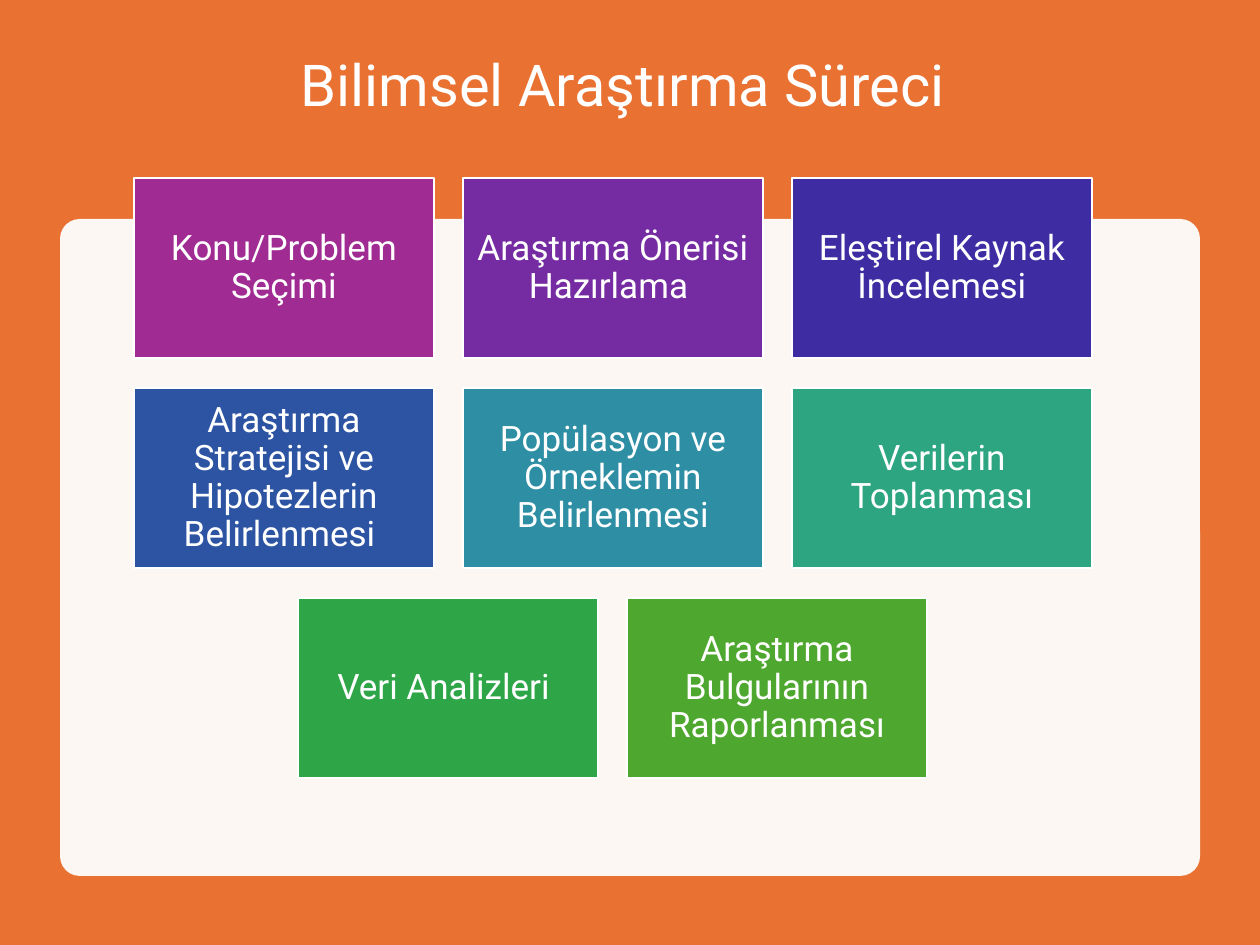
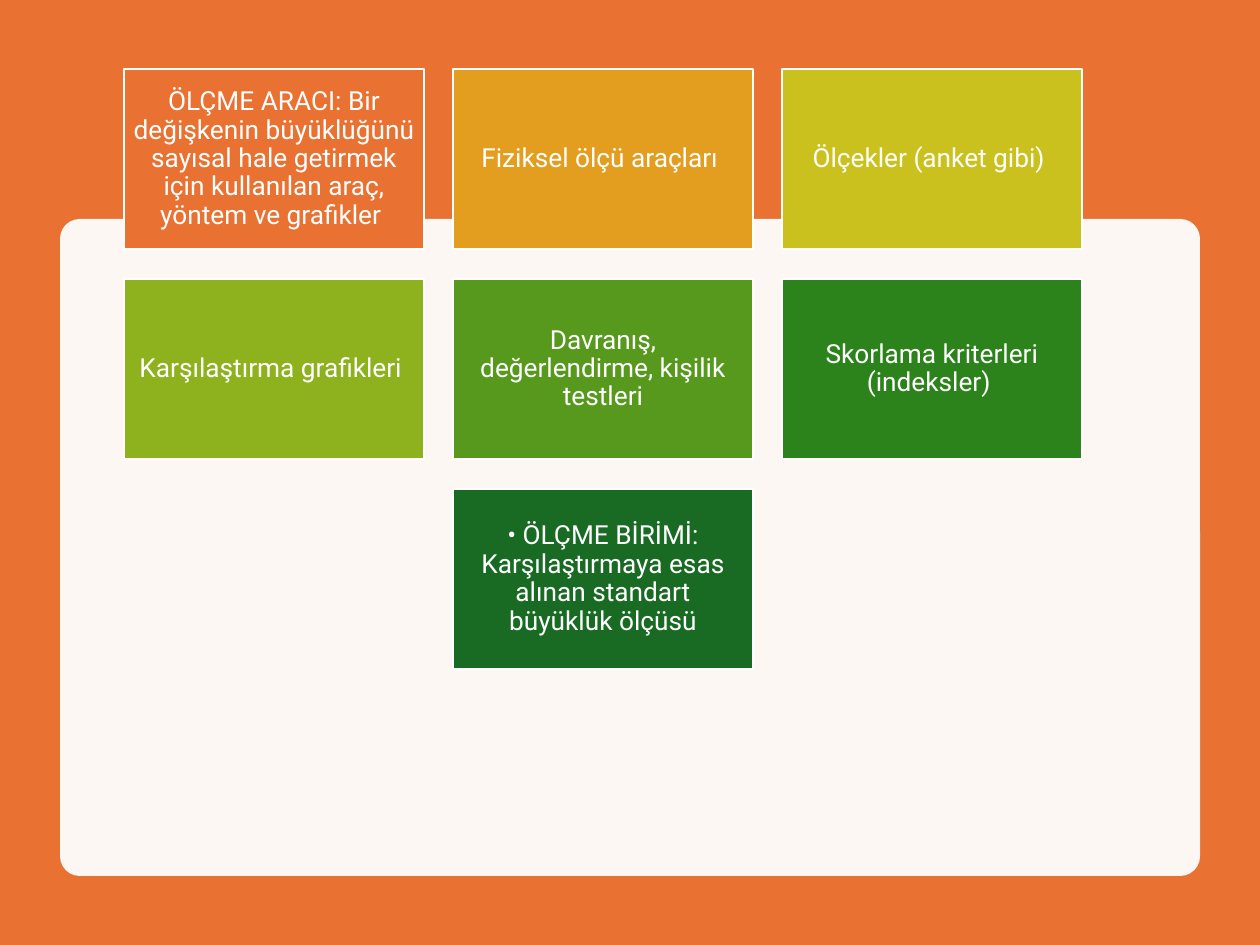
"""Build two slides of coloured cards about the research process and measuring tools."""
from dataclasses import dataclass

from lxml.etree import SubElement
from pptx import Presentation
from pptx.dml.color import RGBColor
from pptx.enum.shapes import MSO_SHAPE
from pptx.enum.text import MSO_ANCHOR, PP_ALIGN
from pptx.oxml.ns import qn
from pptx.shapes.autoshape import Shape
from pptx.slide import Slide
from pptx.text.text import TextFrame
from pptx.util import Emu, Pt

WIDE, HIGH = 1260, 945
ORANGE, WHITE = "E97132", "FFFFFF"
FONT = "Roboto"
COLS = 3
CARD_W, CARD_H = 300, 180
STEP_X, STEP_Y = 329, 210


@dataclass(frozen=True)
class Card:
    """One coloured box with its text."""

    text: str
    fill: str


@dataclass(frozen=True)
class Grid:
    """A set of cards with its top left corner and text style."""

    left: int
    top: int
    size: int
    inset: int
    cards: tuple[Card, ...]


STEPS = Grid(134, 178, 20, 10, (
    Card("Konu/Problem Seçimi", "A02B93"),
    Card("Araştırma Önerisi Hazırlama ", "752BA1"),
    Card("Eleştirel Kaynak İncelemesi", "3D2CA2"),
    Card("Araştırma Stratejisi ve Hipotezlerin Belirlenmesi ", "2C54A3"),
    Card("Popülasyon ve Örneklemin Belirlenmesi", "2D8EA4"),
    Card("Verilerin Toplanması", "2DA581"),
    Card("Veri Analizleri ", "2EA648"),
    Card("Araştırma Bulgularının Raporlanması", "4EA72E"),
))
TOOLS = Grid(124, 69, 15, 8, (
    Card("ÖLÇME ARACI: Bir değişkenin büyüklüğünü sayısal hale getirmek "
         "için kullanılan araç, yöntem ve grafikler ", ORANGE),
    Card("Fiziksel ölçü araçları ", "E39D1F"),
    Card("Ölçekler (anket gibi) ", "CBC11E"),
    Card("Karşılaştırma grafikleri ", "8EB21E"),
    Card("Davranış, değerlendirme, kişilik testleri", "56991D"),
    Card("Skorlama kriterleri (indeksler) ", "2C821B"),
    Card("• ÖLÇME BİRİMİ: Karşılaştırmaya esas alınan standart büyüklük ölçüsü",
         "196B24"),
))


def px(count: int) -> Emu:
    """Turn pixels into EMU."""
    return Emu(round(count * 914400 / 126))


def color(code: str) -> RGBColor:
    """Turn a hex string into a colour."""
    return RGBColor.from_string(code)


def write(frame: TextFrame, text: str, size: int) -> None:
    """Write one centred white line of text."""
    frame.word_wrap = True
    frame.vertical_anchor = MSO_ANCHOR.MIDDLE
    para = frame.paragraphs[0]
    para.alignment = PP_ALIGN.CENTER
    para.line_spacing = 0.9
    run = para.add_run()
    run.text = text
    run.font.size = Pt(size)
    run.font.name = FONT
    run.font.color.rgb = color(WHITE)


def add_box(slide: Slide, kind: MSO_SHAPE, left: int, top: int,
            width: int, height: int, fill: str) -> Shape:
    """Add a flat filled shape without an outline."""
    box = slide.shapes.add_shape(kind, px(left), px(top), px(width), px(height))
    box.shadow.inherit = False
    box.fill.solid()
    box.fill.fore_color.rgb = color(fill)
    box.line.fill.background()
    return box


def add_base(deck: Presentation, layout: int) -> Slide:
    """Add a slide with the orange ground and the pale panel."""
    slide = deck.slides.add_slide(deck.slide_layouts[layout])
    ground = slide.background.fill
    ground.solid()
    ground.fore_color.rgb = color(ORANGE)
    panel = add_box(slide, MSO_SHAPE.ROUNDED_RECTANGLE, 60, 219, 1140, 657, WHITE)
    panel.adjustments[0] = 0.03
    tint = panel.element.spPr.find(qn("a:solidFill")).find(qn("a:srgbClr"))
    SubElement(tint, qn("a:alpha"), val="95000")
    return slide


def add_title(slide: Slide, text: str) -> None:
    """Place and fill the title."""
    title = slide.shapes.title
    title.left, title.top = px(87), px(39)
    title.width, title.height = px(1086), px(98)
    write(title.text_frame, text, 33)


def add_grid(slide: Slide, grid: Grid) -> None:
    """Draw the cards row by row, centring a short last row."""
    for start in range(0, len(grid.cards), COLS):
        row = grid.cards[start:start + COLS]
        left = grid.left + (COLS - len(row)) * STEP_X // 2
        top = grid.top + start // COLS * STEP_Y
        for col, card in enumerate(row):
            box = add_box(slide, MSO_SHAPE.RECTANGLE, left + col * STEP_X, top,
                          CARD_W, CARD_H, card.fill)
            box.line.color.rgb = color(WHITE)
            box.line.width = Pt(1.5)
            frame = box.text_frame
            frame.margin_left = frame.margin_right = px(grid.inset)
            frame.margin_top = frame.margin_bottom = px(grid.inset)
            write(frame, card.text, grid.size)
            frame.paragraphs[0].space_after = Pt(grid.size * 0.35)


def main() -> None:
    """Build and save the deck."""
    deck = Presentation()
    deck.slide_width, deck.slide_height = px(WIDE), px(HIGH)
    first = add_base(deck, 5)
    add_title(first, "Bilimsel Araştırma Süreci ")
    add_grid(first, STEPS)
    add_grid(add_base(deck, 6), TOOLS)
    deck.save("out.pptx")


if __name__ == "__main__":
    main()
